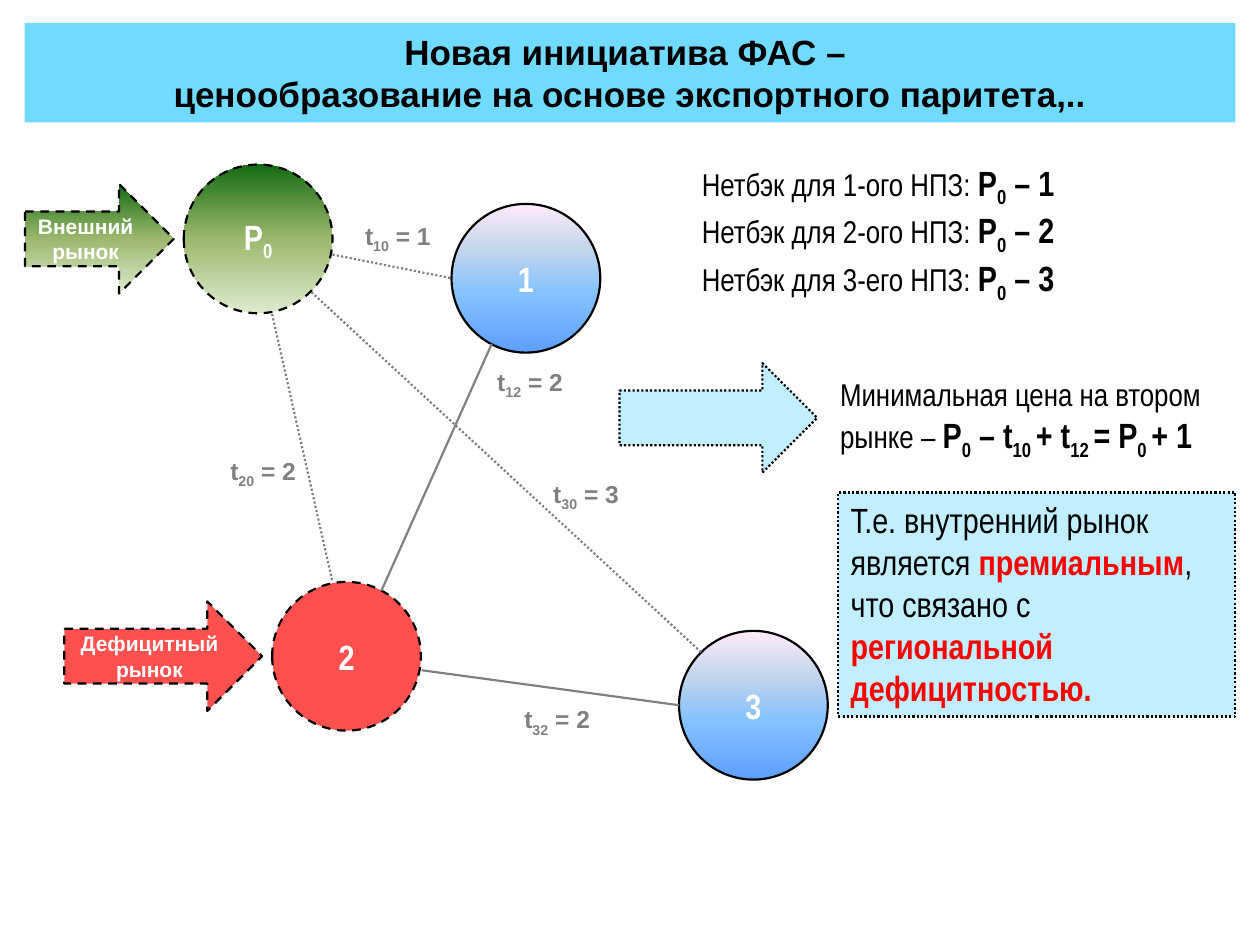
from lxml.etree import SubElement
from pptx import Presentation
from pptx.dml.color import RGBColor as RGB
from pptx.enum.dml import MSO_LINE as Dash
from pptx.enum.shapes import MSO_CONNECTOR as Link, MSO_SHAPE as Form
from pptx.enum.text import MSO_ANCHOR as Anchor, MSO_AUTO_SIZE as Fit, PP_ALIGN as Align
from pptx.oxml.ns import qn
from pptx.util import Pt

BLACK, WHITE = RGB(0, 0, 0), RGB(255, 255, 255)
GREY, RED = RGB(0x80, 0x80, 0x80), RGB(255, 0, 0)
CORAL, SKY, PALE = RGB(0xFF, 0x50, 0x50), RGB(0x71, 0xDA, 0xFF), RGB(0xC1, 0xEF, 0xFF)
GREEN = [(0, RGB(0xDD, 0xEB, 0xCF)), (50, RGB(0x9C, 0xB8, 0x6E)), (100, RGB(0x15, 0x6B, 0x13))]
BLUE = [(0, RGB(0x5E, 0x9E, 0xFF)), (40, RGB(0x85, 0xC2, 0xFF)),
        (70, RGB(0xC4, 0xD6, 0xEB)), (100, RGB(0xFF, 0xEB, 0xFA))]
SANS, SLIM = "Arial", "Arial Narrow"
SIZE, HEAD, GAP = 85, 62.6, 5.7


def pts(*nums):
    return [Pt(num) for num in nums]


def paint(shape, fill):
    """Fill with one colour, or with a list of stops running upwards."""
    if isinstance(fill, RGB):
        shape.fill.solid()
        shape.fill.fore_color.rgb = fill
        return
    shape.fill.gradient()
    shape.fill.gradient_angle = 90
    stops = next(shape._element.iter(qn("a:gsLst")))
    for old in list(stops):
        stops.remove(old)
    for pos, color in fill:
        stop = SubElement(stops, qn("a:gs"), pos=str(pos * 1000))
        SubElement(stop, qn("a:srgbClr"), val=str(color))


def stroke(line, color, dash=None):
    line.color.rgb = color
    line.width = Pt(1.25)
    if dash:
        line.dash_style = dash


def write(par, parts, face=SLIM, align=Align.LEFT):
    """Add (text, size, bold, colour) parts; text between underscores is subscript."""
    par.alignment = align
    for text, size, bold, color in parts:
        for i, piece in enumerate(text.split("_")):
            if not piece:
                continue
            run = par.add_run()
            run.text = piece
            font = run.font
            font.name, font.size, font.bold = face, Pt(size), bold
            font.color.rgb = color
            if i % 2:
                run._r.get_or_add_rPr().set("baseline", "-25000")


def add_form(slide, form, box, fill, dash=None):
    shape = slide.shapes.add_shape(form, *pts(*box))
    shape.shadow.inherit = False
    paint(shape, fill)
    stroke(shape.line, BLACK, dash)
    frame = shape.text_frame
    frame.word_wrap = True
    frame.vertical_anchor = Anchor.MIDDLE
    return shape


def add_text(slide, box, rows, wrap=True, face=SLIM):
    frame = slide.shapes.add_textbox(*pts(*box)).text_frame
    frame.word_wrap = wrap
    frame.auto_size = Fit.SHAPE_TO_FIT_TEXT
    for i, parts in enumerate(rows):
        write(frame.add_paragraph() if i else frame.paragraphs[0], parts, face)


def add_title(slide, box):
    title = slide.shapes.title
    title.left, title.top, title.width, title.height = pts(*box)
    paint(title, SKY)
    frame = title.text_frame
    frame.text = "Новая инициатива ФАС – \vценообразование на основе экспортного паритета,.."
    frame.vertical_anchor = Anchor.MIDDLE
    par = frame.paragraphs[0]
    par.alignment = Align.CENTER
    for run in par.runs:
        run.font.name, run.font.size, run.font.bold = SANS, Pt(20), True
        run.font.color.rgb = BLACK


def add_net(slide, left, top):
    """Markets as circles, joined by routes with their transport costs."""
    nodes = [  # name, x, y, fill, dash, width and text of the arrow
        ("P_0_", 91, 0, GREEN, Dash.DASH, 85, "Внешний рынок"),
        ("2", 141.5, 238.5, CORAL, Dash.DASH, 113, "Дефицитный рынок"),
        ("1", 244, 22.5, BLUE, None, 0, ""),
        ("3", 374, 266.5, BLUE, None, 0, ""),
    ]
    routes = [  # ends, dash, label, label position
        (176, 51.5, 244, 65, Dash.ROUND_DOT, "t_10_ = 1", 187.5, 28.5),
        (141.5, 85.5, 176, 238.5, Dash.ROUND_DOT, "t_20_ = 2", 110.5, 163),
        (267, 102.5, 204, 243.5, None, "t_12_ = 2", 263, 112),
        (374, 309, 227, 289, None, "t_32_ = 2", 278.5, 305),
        (164, 73, 387, 279, Dash.ROUND_DOT, "t_30_ = 3", 295, 176),
    ]
    for name, x, y, fill, dash, wide, note in nodes:
        x, y = left + x, top + y
        node = add_form(slide, Form.OVAL, (x, y, SIZE, SIZE), fill, dash)
        write(node.text_frame.paragraphs[0], [(name, 20, True, WHITE)], align=Align.CENTER)
        if note:
            box = (x - GAP - wide, y + (SIZE - HEAD) / 2, wide, HEAD)
            arrow = add_form(slide, Form.RIGHT_ARROW, box, fill, dash)
            write(arrow.text_frame.paragraphs[0], [(note, 12, True, WHITE)], SANS, Align.CENTER)
    for x1, y1, x2, y2, dash, cost, x, y in routes:
        ends = pts(left + x1, top + y1, left + x2, top + y2)
        line = slide.shapes.add_connector(Link.STRAIGHT, *ends)
        stroke(line.line, GREY, dash)
        SubElement(line._element.spPr, qn("a:effectLst"))
        add_text(slide, (left + x, top + y, 53.5, 24.5), [[(cost, 14, True, GREY)]], False, SANS)


def add_prices(slide, left, top):
    """Netbacks, the price they lead to, and the conclusion."""
    rows = [[(f"Нетбэк для {rank} НПЗ: ", 18, False, BLACK), (f"P_0_ – {cost}", 20, True, BLACK)]
            for cost, rank in enumerate(("1-ого", "2-ого", "3-его"), 1)]
    add_text(slide, (left + 40, top, 244, 80), rows)
    add_form(slide, Form.RIGHT_ARROW, (left, top + 119, 113, HEAD), PALE, Dash.ROUND_DOT)
    add_text(slide, (left + 119, top + 122.5, 227, 53.5), [[
        ("Минимальная цена на втором рынке – ", 18, False, BLACK),
        ("P_0_ – t_10 _+ t_12 _= P_0 _+ 1", 20, True, BLACK)]])
    box = (left + 125, top + 193, 227, 128)
    frame = add_form(slide, Form.RECTANGLE, box, PALE, Dash.ROUND_DOT).text_frame
    frame.vertical_anchor = Anchor.TOP
    frame.auto_size = Fit.SHAPE_TO_FIT_TEXT
    write(frame.paragraphs[0], [
        ("Т.е. внутренний рынок является ", 20, False, BLACK), ("премиальным", 20, True, RED),
        (", что связано с ", 20, False, BLACK), ("региональной дефицитностью.", 20, True, RED)])


def main():
    deck = Presentation()
    deck.slide_width, deck.slide_height = pts(720, 540)
    slide = deck.slides.add_slide(deck.slide_layouts[5])
    add_title(slide, (14, 13, 692, 57))
    add_net(slide, 14, 94)
    add_prices(slide, 354, 88.5)
    deck.save("out.pptx")


if __name__ == "__main__":
    main()
